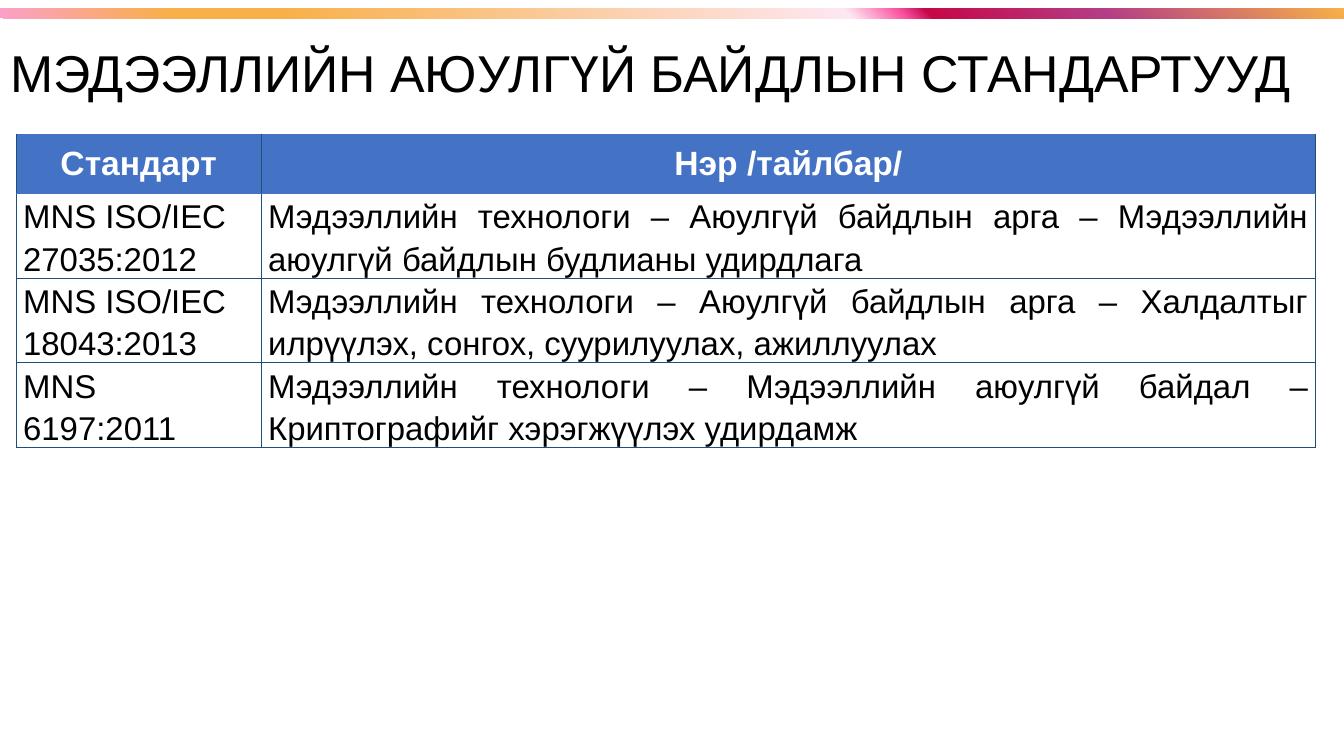
from pptx import Presentation
from pptx.dml.color import RGBColor
from pptx.enum.shapes import MSO_SHAPE
from pptx.enum.text import MSO_ANCHOR, MSO_AUTO_SIZE, PP_ALIGN
from pptx.oxml import parse_xml
from pptx.oxml.ns import nsdecls
from pptx.util import Inches, Pt

BLACK = RGBColor(0x00, 0x00, 0x00)
WHITE = RGBColor(0xFF, 0xFF, 0xFF)
BLUE = RGBColor(0x44, 0x72, 0xC4)
NAVY = RGBColor(0x1F, 0x4E, 0x79)
STOPS = [
    (0, RGBColor(0xFC, 0x9F, 0xCB)),
    (13, RGBColor(0xF8, 0xB0, 0x49)),
    (21, RGBColor(0xF8, 0xB0, 0x49)),
    (63, RGBColor(0xFE, 0xE7, 0xF2)),
    (67, RGBColor(0xF9, 0x52, 0xA0)),
    (69, RGBColor(0xC5, 0x08, 0x49)),
    (82, RGBColor(0xB4, 0x3E, 0x85)),
    (100, RGBColor(0xF8, 0xB0, 0x49)),
]
TITLE = "МЭДЭЭЛЛИЙН АЮУЛГҮЙ БАЙДЛЫН СТАНДАРТУУД"
ROWS = [
    ("Стандарт", "Нэр /тайлбар/"),
    ("MNS ISO/IEC 27035:2012",
     "Мэдээллийн технологи – Аюулгүй байдлын арга – Мэдээллийн аюулгүй байдлын будлианы удирдлага"),
    ("MNS ISO/IEC 18043:2013",
     "Мэдээллийн технологи – Аюулгүй байдлын арга – Халдалтыг илрүүлэх, сонгох, суурилуулах, ажиллуулах"),
    ("MNS 6197:2011",
     "Мэдээллийн технологи – Мэдээллийн аюулгүй байдал – Криптографийг хэрэгжүүлэх удирдамж"),
]
COLS = (2.43, 10.46)
HEAD = 0.59
BODY = 0.84


def style(para, size, color, bold=False):
    for run in para.runs:
        font = run.font
        font.name = "Arial"
        font.size = Pt(size)
        font.bold = bold
        font.color.rgb = color


def add_title(slide, left, top, width, height):
    title = slide.shapes.title
    title.left, title.top = Inches(left), Inches(top)
    title.width, title.height = Inches(width), Inches(height)
    frame = title.text_frame
    frame.text = TITLE
    frame.word_wrap = True
    frame.auto_size = MSO_AUTO_SIZE.NONE
    frame.vertical_anchor = MSO_ANCHOR.MIDDLE
    para = frame.paragraphs[0]
    para.alignment = PP_ALIGN.LEFT
    para.line_spacing = 0.9
    style(para, 37, BLACK)


def add_strip(slide, left, top, width, height):
    strip = slide.shapes.add_shape(
        MSO_SHAPE.RECTANGLE, Inches(left), Inches(top), Inches(width), Inches(height))
    strip.shadow.inherit = False
    strip.line.fill.background()
    stops = "".join(
        f'<a:gs pos="{pos * 1000}"><a:srgbClr val="{color}"/></a:gs>' for pos, color in STOPS)
    strip.fill.gradient()
    grad = strip.fill._xPr.gradFill
    grad.getparent().replace(grad, parse_xml(
        f'<a:gradFill {nsdecls("a")} rotWithShape="1"><a:gsLst>{stops}</a:gsLst>'
        '<a:lin ang="18900000" scaled="0"/></a:gradFill>'))


def add_edge(cell, side, color, width):
    props = cell._tc.get_or_add_tcPr()
    props.append(parse_xml(
        f'<a:ln{side} {nsdecls("a")} w="{Pt(width)}"><a:solidFill>'
        f'<a:srgbClr val="{color}"/></a:solidFill></a:ln{side}>'))


def fill_cell(cell, text, row, col):
    head = row == 0
    for side in "LRTB":
        seam = (side == "T" and row < 2) or (side == "B" and head)
        add_edge(cell, side, BLUE if seam else NAVY, 0.5 if seam else 1)
    cell.fill.solid()
    cell.fill.fore_color.rgb = BLUE if head else WHITE
    cell.vertical_anchor = MSO_ANCHOR.MIDDLE
    cell.text_frame.text = text
    para = cell.text_frame.paragraphs[0]
    if head:
        para.alignment = PP_ALIGN.CENTER
        style(para, 24, WHITE, True)
        return
    cell.margin_left = cell.margin_right = Inches(0.07)
    cell.margin_top = cell.margin_bottom = 0
    para.alignment = PP_ALIGN.JUSTIFY if col else PP_ALIGN.LEFT
    para.line_spacing = 1.15
    style(para, 23.5, BLACK)


def add_grid(slide, left, top):
    tall = HEAD + BODY * (len(ROWS) - 1)
    table = slide.shapes.add_table(
        len(ROWS), len(COLS), Inches(left), Inches(top), Inches(sum(COLS)), Inches(tall)).table
    for col, width in enumerate(COLS):
        table.columns[col].width = Inches(width)
    for row, texts in enumerate(ROWS):
        table.rows[row].height = Inches(BODY if row else HEAD)
        for col, text in enumerate(texts):
            fill_cell(table.cell(row, col), text, row, col)


def main():
    deck = Presentation()
    deck.slide_width, deck.slide_height = Inches(13.33), Inches(7.5)
    slide = deck.slides.add_slide(deck.slide_layouts[5])
    add_title(slide, 0, 0.18, 13.69, 1.15)
    add_strip(slide, 0, 0.08, 13.33, 0.1)
    add_grid(slide, 0.16, 1.33)
    deck.save("out.pptx")


if __name__ == "__main__":
    main()
